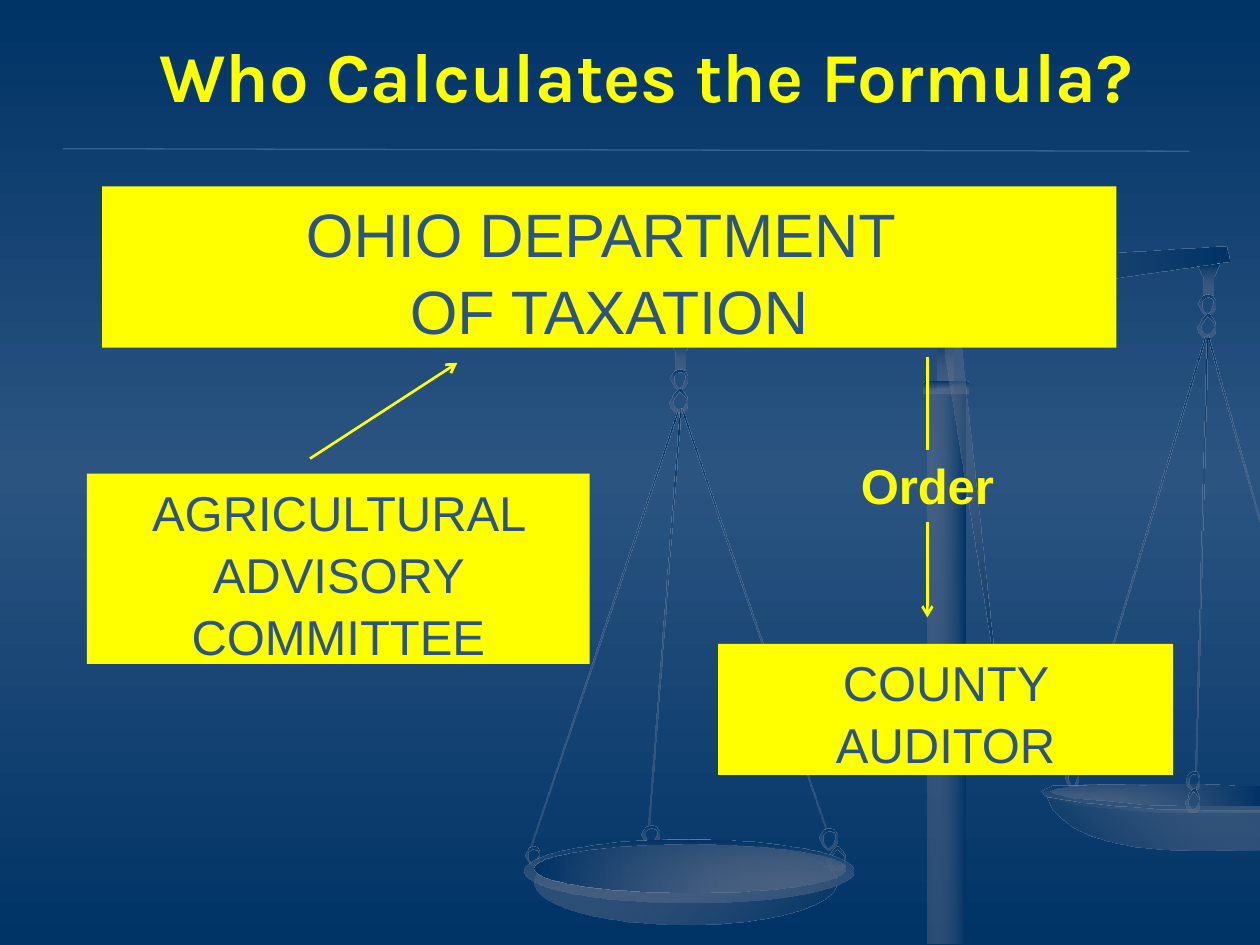
from lxml.etree import SubElement
from pptx import Presentation
from pptx.dml.color import RGBColor
from pptx.enum.shapes import MSO_CONNECTOR, MSO_SHAPE
from pptx.enum.text import MSO_ANCHOR, PP_ALIGN
from pptx.oxml.ns import qn
from pptx.util import Pt

PX = 9144  # 100 px to the inch
COLORS = {"navy": "003366", "blue": "2B5481", "haze": "797F93",
          "rule": "2F6498", "yellow": "FFFF00"}
OPACITY = {"haze": 30}
SINK, RISE = ("navy", "haze"), ("haze", "navy")

# Chain links as an outer and an inner contour, in px from the corner of their own box
UPPER_LINK = (15, 17, [
    [(7, 17), (11, 14), (14, 10), (14, 5), (11, 1), (7, 0), (4, 1), (2, 3), (0, 7), (2, 12), (5, 15)],
    [(8, 2), (11, 3), (12, 5), (12, 7), (11, 10), (9, 13), (7, 15), (5, 13), (3, 10), (3, 5), (5, 3)]])
LOWER_LINK = (16, 19, [
    [(1, 15), (3, 17), (5, 19), (10, 19), (14, 16), (15, 11), (14, 6), (10, 1), (8, 0), (4, 4), (2, 8), (0, 11)],
    [(3, 11), (4, 8), (6, 5), (8, 2), (13, 7), (14, 11), (11, 15), (7, 16), (4, 14)]])
HOOK = [(18, 0), (0, 1), (5, 12), (5, 26), (13, 26), (13, 11)]
BEAM = [(449, 0), (452, 12), (1, 77), (0, 68), (213, 16), (235, 13)]
BRACE = [(43, 274), (2, 15), (2, 11), (0, 3), (12, 0), (13, 9), (15, 12)]
RIGHT_RIM = [(131, 1), (83, 1), (48, 0), (24, 1), (9, 1), (4, 3), (0, 5), (3, 9), (10, 11),
             (25, 15), (51, 18), (87, 21), (131, 22), (173, 22), (173, 3), (153, 3)]
RIGHT_BOWL = [(0, 0), (4, 9), (11, 16), (21, 24), (34, 30), (51, 35), (72, 39), (97, 41),
              (126, 42), (169, 41), (169, 10), (122, 10), (87, 9), (55, 7), (26, 4)]
RIGHT_HOLLOW = [(122, 0), (52, 0), (28, 0), (17, 1), (5, 3), (0, 5), (4, 7), (18, 10),
                (44, 12), (78, 15), (121, 16), (166, 16), (166, 1), (145, 1)]


def color(key):
    return RGBColor.from_string(COLORS[key])


def paint_gradient(fill, parent, keys, angle):
    """Spread the colours evenly along a clockwise angle; parent holds the fill element."""
    fill.solid()
    solid = parent.find(qn("a:solidFill"))
    gradient = parent.makeelement(qn("a:gradFill"), {"rotWithShape": "1"})
    stops = SubElement(gradient, qn("a:gsLst"))
    for index, key in enumerate(keys):
        stop = SubElement(stops, qn("a:gs"), pos=str(100000 * index // (len(keys) - 1)))
        tint = SubElement(stop, qn("a:srgbClr"), val=COLORS[key])
        if key in OPACITY:
            SubElement(tint, qn("a:alpha"), val=str(OPACITY[key] * 1000))
    SubElement(gradient, qn("a:lin"), ang=str(angle * 60000), scaled="0")
    parent.replace(solid, gradient)


def shade(part, keys, angle):
    part.shadow.inherit = False
    part.line.fill.background()
    paint_gradient(part.fill, part._element.spPr, keys, angle)


def add_solid(slide, preset, box, keys=SINK, angle=90, rotation=0):
    part = slide.shapes.add_shape(preset, *(n * PX for n in box))
    part.rotation = rotation
    shade(part, keys, angle)


def add_outline(slide, left, top, contours, keys=SINK, angle=90, close=True):
    placed = [[(left + x, top + y) for x, y in contour] for contour in contours]
    builder = slide.shapes.build_freeform(*placed[0][0], scale=PX)
    for index, contour in enumerate(placed):
        if index:
            builder.move_to(*contour[0])
        builder.add_line_segments(contour[1:], close=close)
    shade(builder.convert_to_shape(), keys, angle)


def add_link(slide, link, left, top, width, height):
    own_width, own_height, contours = link
    fitted = [[(round(x * width / own_width), round(y * height / own_height))
               for x, y in contour] for contour in contours]
    add_outline(slide, left, top, fitted)


def add_strings(slide):
    for left, top, height, rotation in [
            (904, 260, 360, 16.6), (953, 266, 347, 1.5), (979, 264, 153, 344.6),
            (598, 315, 353, 341), (479, 316, 368, 18.6), (527, 325, 331, 4.2)]:
        add_solid(slide, MSO_SHAPE.RECTANGLE, (left, top, 1, height), rotation=rotation)


def add_right_pan(slide, left, top):
    add_link(slide, UPPER_LINK, left + 19, top - 14, 11, 17)
    add_outline(slide, left, top, [RIGHT_RIM])
    add_outline(slide, left + 4, top + 10, [RIGHT_BOWL], angle=315)
    add_outline(slide, left + 7, top, [RIGHT_HOLLOW], RISE, 0)
    add_link(slide, UPPER_LINK, left + 115, top - 11, 11, 17)
    add_link(slide, LOWER_LINK, left + 114, top + 3, 12, 19)


def add_left_pan(slide, left, top):
    add_link(slide, UPPER_LINK, left + 93, top - 11, 15, 16)
    add_link(slide, LOWER_LINK, left + 240, top + 6, 16, 19)
    add_link(slide, UPPER_LINK, left + 1, top + 6, 12, 16)
    add_solid(slide, MSO_SHAPE.OVAL, (left + 8, top, 240, 68), RISE, 45)
    add_solid(slide, MSO_SHAPE.OVAL, (left, top, 261, 50))
    add_solid(slide, MSO_SHAPE.OVAL, (left + 8, top + 4, 247, 38), angle=0)
    add_link(slide, UPPER_LINK, left + 234, top - 8, 16, 17)


def add_hanger(slide, left, top):
    add_outline(slide, left, top, [HOOK])
    add_link(slide, UPPER_LINK, left + 1, top + 25, 15, 17)
    add_link(slide, LOWER_LINK, left, top + 40, 16, 19)


def add_post(slide, left, top):
    add_solid(slide, MSO_SHAPE.RECTANGLE, (left, top, 30, 441), RISE, 0)
    add_solid(slide, MSO_SHAPE.RECTANGLE, (left + 8, top - 40, 13, 42))
    add_solid(slide, MSO_SHAPE.ROUNDED_RECTANGLE, (left - 3, top - 5, 36, 9))
    add_outline(slide, left + 12, top - 43, [BRACE], RISE, 45, close=False)


def add_scales(slide):
    add_strings(slide)
    add_right_pan(slide, 827, 623)
    add_hanger(slide, 531, 268)
    add_hanger(slide, 950, 209)
    add_outline(slide, 524, 196, [BEAM], RISE, 0)
    add_left_pan(slide, 416, 666)
    add_post(slide, 736, 308)


def write(shape, text, size, ink, font="Arial", bold=False, spacing=None):
    shape.text_frame.text = text
    for paragraph in shape.text_frame.paragraphs:
        paragraph.alignment = PP_ALIGN.CENTER
        paragraph.line_spacing = spacing
        for run in paragraph.runs:
            run.font.name, run.font.size, run.font.bold = font, Pt(size), bold
            run.font.color.rgb = color(ink)


def add_label(slide, box, text, size, font="Arial", wrap=True, anchor=MSO_ANCHOR.TOP):
    label = slide.shapes.add_textbox(*(n * PX for n in box))
    write(label, text, size, "yellow", font, bold=True)
    label.text_frame.word_wrap = wrap
    label.text_frame.vertical_anchor = anchor
    return label


def add_office(slide, box, text, size):
    office = slide.shapes.add_shape(MSO_SHAPE.RECTANGLE, *(n * PX for n in box))
    office.shadow.inherit = False
    office.fill.solid()
    office.fill.fore_color.rgb = color("yellow")
    office.line.fill.background()
    write(office, text, size, "blue", spacing=1.05)
    office.text_frame.word_wrap = True
    office.text_frame.vertical_anchor = MSO_ANCHOR.TOP


def add_line(slide, start, end, ink="yellow", width=1.5, arrow=False):
    line = slide.shapes.add_connector(MSO_CONNECTOR.STRAIGHT, *(n * PX for n in start + end))
    line.line.color.rgb = color(ink)
    line.line.width = Pt(width)
    if arrow:
        SubElement(line.line._get_or_add_ln(), qn("a:tailEnd"), type="arrow")
    SubElement(line._element.spPr, qn("a:effectLst"))
    return line


def add_formula_flow(slide):
    order = add_label(slide, (672, 357, 128, 57), "Order", 28, wrap=False)
    add_office(slide, (81, 148, 805, 128), "OHIO DEPARTMENT \nOF TAXATION", 35)
    add_office(slide, (69, 376, 399, 151), "AGRICULTURAL ADVISORY COMMITTEE", 28)
    add_office(slide, (570, 511, 361, 104), "COUNTY AUDITOR", 28)
    add_line(slide, (246, 364), (363, 288), arrow=True)
    add_line(slide, (736, 283), (736, 357)).end_connect(order, 0)
    add_line(slide, (736, 414), (736, 490), arrow=True).begin_connect(order, 2)


def main():
    deck = Presentation()
    deck.slide_width, deck.slide_height = 1000 * PX, 750 * PX
    slide = deck.slides.add_slide(deck.slide_layouts[6])
    backdrop = slide.background.fill
    backdrop.solid()
    paint_gradient(backdrop, slide._element.find(".//" + qn("p:bgPr")),
                   ("navy", "blue", "navy"), 90)
    add_scales(slide)
    add_label(slide, (91, 8, 844, 102), "Who Calculates the Formula?", 40, "Karla",
              anchor=MSO_ANCHOR.MIDDLE)
    add_line(slide, (50, 118), (944, 120), "rule", 0.75)
    add_formula_flow(slide)
    deck.save("out.pptx")


if __name__ == "__main__":
    main()
